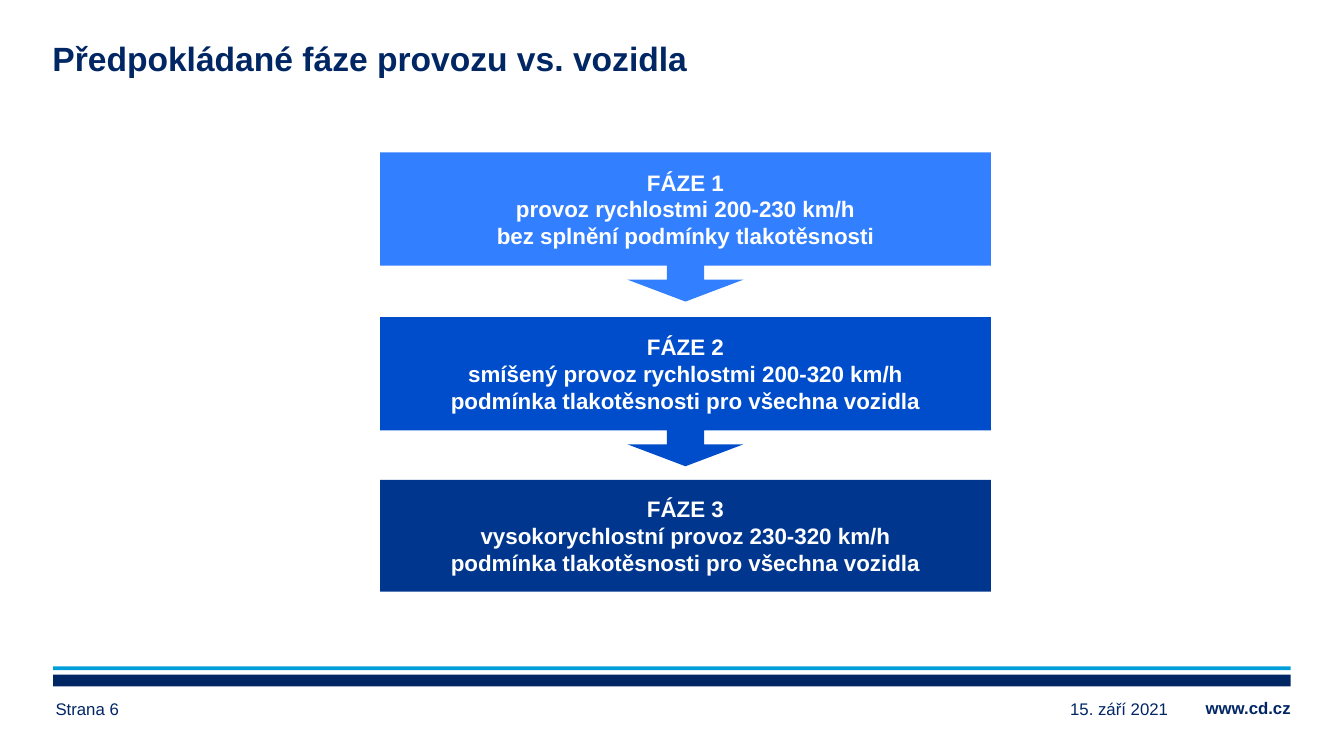
from dataclasses import dataclass

from pptx import Presentation
from pptx.dml.color import RGBColor
from pptx.enum.shapes import MSO_SHAPE as Preset
from pptx.enum.text import MSO_ANCHOR as Anchor, PP_ALIGN as Align
from pptx.util import Cm, Pt


@dataclass(frozen=True)
class Theme:
    font: str = "Arial"
    navy: str = "002664"
    cyan: str = "009FDA"
    white: str = "FFFFFF"
    phase_fills: tuple = ("3280FF", "004DCB", "00368D")
    title_size: int = 24
    phase_size: int = 16
    footer_size: int = 12
    title_line: int = 28
    footer_line: int = 15


THEME = Theme()

MARGIN = 1.34
CONTENT_WIDTH = 31.19
PHASE_LEFT, PHASE_TOP = 9.58, 3.84
PHASE_WIDTH, PHASE_HEIGHT, PHASE_PITCH = 15.39, 3.76, 4.15
BOX_SHARE = 0.76
ARROW_ADJUSTMENTS = (0.25, 0.389, 0.147, BOX_SHARE)

PHASES = (
    "FÁZE 1\nprovoz rychlostmi 200-230 km/h\nbez splnění podmínky tlakotěsnosti",
    "FÁZE 2\nsmíšený provoz rychlostmi 200-320 km/h\n"
    "podmínka tlakotěsnosti pro všechna vozidla",
    "FÁZE 3\nvysokorychlostní provoz 230-320 km/h\n"
    "podmínka tlakotěsnosti pro všechna vozidla",
)


def write(frame, text, size, color, bold=False, align=Align.LEFT,
          anchor=Anchor.MIDDLE, line=None):
    frame.text = text
    frame.word_wrap = True
    frame.vertical_anchor = anchor
    for paragraph in frame.paragraphs:
        paragraph.alignment = align
        if line:
            paragraph.line_spacing = Pt(line)
        for span in paragraph.runs:
            span.font.name = THEME.font
            span.font.size = Pt(size)
            span.font.bold = bold
            span.font.color.rgb = RGBColor.from_string(color)


def clear_margins(frame):
    frame.margin_left = frame.margin_right = 0
    frame.margin_top = frame.margin_bottom = 0


def add_block(page, preset, left, top, width, height, fill):
    block = page.shapes.add_shape(preset, Cm(left), Cm(top), Cm(width), Cm(height))
    block.shadow.inherit = False
    block.fill.solid()
    block.fill.fore_color.rgb = RGBColor.from_string(fill)
    block.line.fill.background()
    return block


def set_title(page, text):
    title = page.shapes.title
    title.left, title.top = Cm(1.32), Cm(0.99)
    title.width, title.height = Cm(CONTENT_WIDTH), Cm(1.12)
    clear_margins(title.text_frame)
    write(title.text_frame, text, THEME.title_size, THEME.navy, bold=True,
          anchor=Anchor.TOP, line=THEME.title_line)


def add_footer(page, text, left, top, width, align, bold=False):
    box = page.shapes.add_textbox(Cm(left), Cm(top), Cm(width), Cm(0.99))
    clear_margins(box.text_frame)
    write(box.text_frame, text, THEME.footer_size, THEME.navy, bold=bold,
          align=align, anchor=Anchor.BOTTOM, line=THEME.footer_line)


def add_phases(page):
    """Stack the phases; all but the last point down to the next one."""
    for index, (text, fill) in enumerate(zip(PHASES, THEME.phase_fills)):
        is_last = index == len(PHASES) - 1
        preset = Preset.RECTANGLE if is_last else Preset.DOWN_ARROW_CALLOUT
        height = PHASE_HEIGHT * (0.75 if is_last else 1)
        top = PHASE_TOP + index * PHASE_PITCH - (0.05 if is_last else 0)
        block = add_block(page, preset, PHASE_LEFT, top, PHASE_WIDTH, height, fill)
        if not is_last:
            for position, value in enumerate(ARROW_ADJUSTMENTS):
                block.adjustments[position] = value
        write(block.text_frame, text, THEME.phase_size, THEME.white, bold=True,
              align=Align.CENTER)


def main():
    deck = Presentation()
    deck.slide_width, deck.slide_height = Cm(33.87), Cm(19.05)
    page = deck.slides.add_slide(deck.slide_layouts[5])

    add_block(page, Preset.RECTANGLE, MARGIN, 16.79, CONTENT_WIDTH, 0.1, THEME.cyan)
    add_block(page, Preset.RECTANGLE, MARGIN, 17, CONTENT_WIDTH, 0.3, THEME.navy)
    add_footer(page, "www.cd.cz", 28.67, 17.09, 3.86, Align.RIGHT, bold=True)
    set_title(page, "Předpokládané fáze provozu vs. vozidla")
    add_footer(page, "15. září 2021", 22.81, 17.12, 6.63, Align.RIGHT)
    add_footer(page, "Strana 6", 1.4, 17.12, 4.14, Align.LEFT)
    add_phases(page)

    deck.save("out.pptx")


if __name__ == "__main__":
    main()
